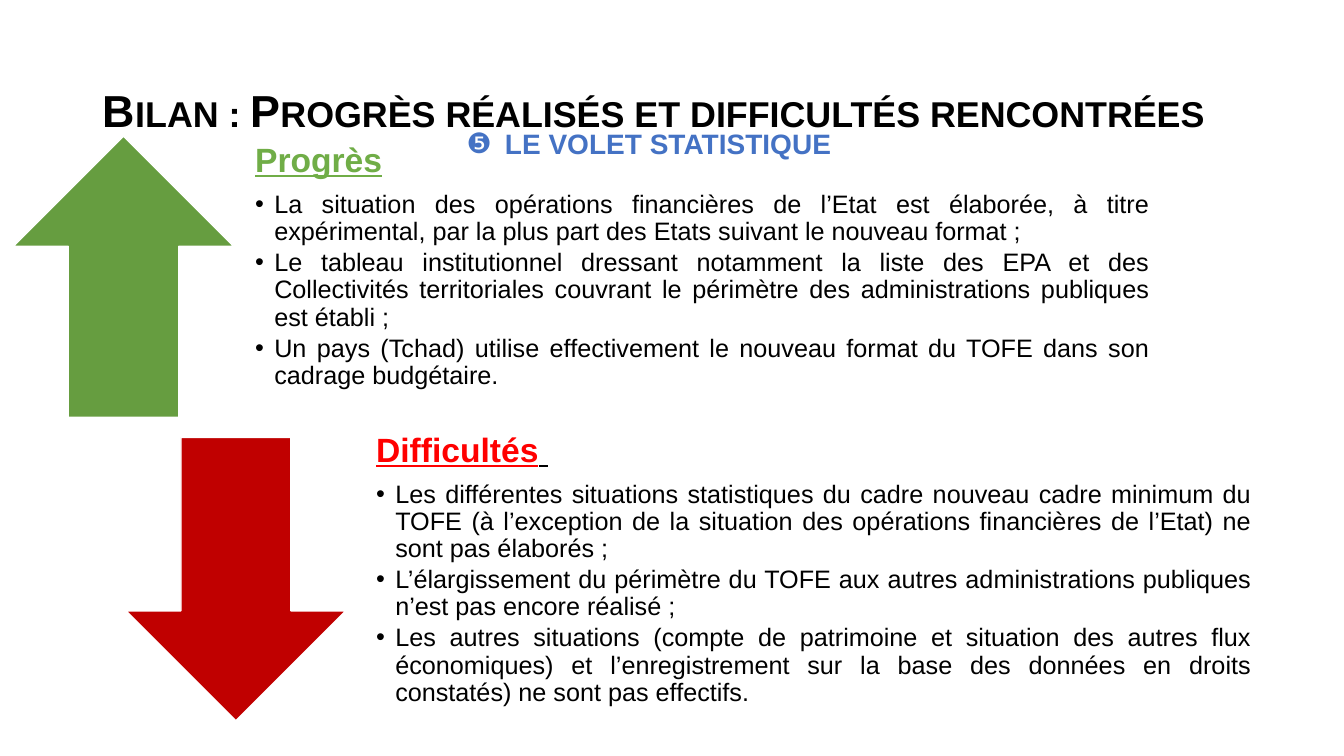
from dataclasses import dataclass

from lxml import etree
from pptx import Presentation
from pptx.dml.color import RGBColor
from pptx.enum.shapes import MSO_SHAPE
from pptx.enum.text import MSO_ANCHOR, MSO_AUTO_SIZE, PP_ALIGN
from pptx.oxml.ns import qn
from pptx.util import Inches, Pt

UP_ARROW = MSO_SHAPE.UP_ARROW
DOWN_ARROW = MSO_SHAPE.DOWN_ARROW
MIDDLE = MSO_ANCHOR.MIDDLE
NO_AUTOFIT = MSO_AUTO_SIZE.NONE
LEFT = PP_ALIGN.LEFT
JUSTIFY = PP_ALIGN.JUSTIFY
TWO_CONTENT_LAYOUT = 3


@dataclass(frozen=True)
class Theme:
    font: str = "Arial"
    title_size: int = 32
    heading_size: int = 24
    subtitle_size: int = 20
    body_size: int = 18
    text: str = "000000"
    white: str = "FFFFFF"
    subtitle: str = "4472C4"
    progress_heading: str = "70AD47"
    progress_arrow: str = "669D40"
    difficulty_heading: str = "FF0000"
    difficulty_arrow: str = "C00000"


THEME = Theme()


@dataclass(frozen=True)
class Box:
    left: float
    top: float
    width: float
    height: float

    def lengths(self):
        return [Inches(side) for side in (self.left, self.top, self.width, self.height)]


@dataclass(frozen=True)
class Section:
    arrow: MSO_SHAPE
    arrow_box: Box
    arrow_color: str
    text_box: Box
    heading: str
    heading_color: str
    points: tuple[str, ...]
    heading_tail: str = ""


SECTIONS = (
    Section(
        UP_ARROW, Box(0.13, 1.35, 2.19, 2.79), THEME.progress_arrow,
        Box(2.34, 1.35, 9.25, 2.78), "Progrès", THEME.progress_heading,
        (
            "La situation des opérations financières de l’Etat est élaborée, à titre "
            "expérimental, par la plus part des Etats suivant le nouveau format ;",
            "Le tableau institutionnel dressant notamment la liste des EPA et des Collectivités "
            "territoriales couvrant le périmètre des administrations publiques est établi ;",
            "Un pays (Tchad) utilise effectivement le nouveau format du TOFE dans son "
            "cadrage budgétaire.",
        ),
    ),
    Section(
        DOWN_ARROW, Box(1.25, 4.34, 2.18, 2.81), THEME.difficulty_arrow,
        Box(3.54, 4.36, 9.06, 2.78), "Difficultés", THEME.difficulty_heading,
        (
            "Les différentes situations statistiques du cadre nouveau cadre minimum du TOFE "
            "(à l’exception de la situation des opérations financières de l’Etat) ne sont "
            "pas élaborés ;",
            "L’élargissement du périmètre du TOFE aux autres administrations publiques "
            "n’est pas encore réalisé ;",
            "Les autres situations (compte de patrimoine et situation des autres flux "
            "économiques) et l’enregistrement sur la base des données en droits constatés) "
            "ne sont pas effectifs.",
        ),
        heading_tail=" ",
    ),
)


def place(shape, box: Box) -> None:
    shape.left, shape.top, shape.width, shape.height = box.lengths()


def format_run(run, size: int, color: str, bold: bool = False, underline: bool = False) -> None:
    font = run.font
    font.name = THEME.font
    font.size = Pt(size)
    font.bold = bold
    font.underline = underline
    font.color.rgb = RGBColor.from_string(color)


def set_spacing(paragraph, after: float = 0) -> None:
    paragraph.line_spacing = 0.9
    paragraph.space_before = Pt(0)
    paragraph.space_after = Pt(after)


def set_bullet(paragraph, character: str = "", indent: float = 0) -> None:
    """Give a hanging bullet, or none when no character is given."""
    properties = paragraph._p.get_or_add_pPr()
    properties.set("marL", str(Inches(indent)))
    properties.set("indent", str(-Inches(indent)))
    if character:
        etree.SubElement(properties, qn("a:buFont")).set("typeface", THEME.font)
        etree.SubElement(properties, qn("a:buChar")).set("char", character)
    else:
        etree.SubElement(properties, qn("a:buNone"))


def add_arrow(slide, section: Section) -> None:
    arrow = slide.shapes.add_shape(section.arrow, *section.arrow_box.lengths())
    arrow.shadow.inherit = False
    arrow.fill.solid()
    arrow.fill.fore_color.rgb = RGBColor.from_string(section.arrow_color)
    arrow.line.color.rgb = RGBColor.from_string(THEME.white)
    arrow.line.width = Pt(1)


def fill_section(placeholder, section: Section) -> None:
    place(placeholder, section.text_box)
    frame = placeholder.text_frame
    frame.auto_size = NO_AUTOFIT
    frame.vertical_anchor = MIDDLE
    frame.margin_left = frame.margin_right = frame.margin_bottom = Inches(0.19)
    frame.margin_top = 0

    frame.text = section.heading
    heading = frame.paragraphs[0]
    set_spacing(heading, after=8.4)
    set_bullet(heading)
    format_run(heading.runs[0], THEME.heading_size, section.heading_color, True, True)
    if section.heading_tail:
        tail = heading.add_run()
        tail.text = section.heading_tail
        format_run(tail, THEME.heading_size, THEME.text, True, True)

    for point in section.points:
        paragraph = frame.add_paragraph()
        paragraph.text = point
        paragraph.level = 1
        paragraph.alignment = JUSTIFY
        set_spacing(paragraph, after=2.7)
        set_bullet(paragraph, "•", 0.19)
        format_run(paragraph.runs[0], THEME.body_size, THEME.text)


def fill_title(title) -> None:
    place(title, Box(0.92, 0.4, 11.5, 1.45))
    frame = title.text_frame
    frame.text = "Bilan : Progrès réalisés et difficultés rencontrées"
    frame.auto_size = NO_AUTOFIT
    frame.vertical_anchor = MIDDLE
    paragraph = frame.paragraphs[0]
    paragraph.alignment = LEFT
    set_spacing(paragraph)
    run = paragraph.runs[0]
    format_run(run, THEME.title_size, THEME.text, bold=True)
    run.font._element.set("cap", "small")


def add_subtitle(slide) -> None:
    subtitle = slide.shapes.add_textbox(*Box(4.53, 1.21, 7.37, 0.44).lengths())
    frame = subtitle.text_frame
    frame.word_wrap = True
    frame.text = "LE VOLET STATISTIQUE"
    paragraph = frame.paragraphs[0]
    set_bullet(paragraph, "❺", 0.38)
    format_run(paragraph.runs[0], THEME.subtitle_size, THEME.subtitle, bold=True)


def main() -> None:
    presentation = Presentation()
    presentation.slide_width = Inches(13.33)
    presentation.slide_height = Inches(7.5)
    slide = presentation.slides.add_slide(presentation.slide_layouts[TWO_CONTENT_LAYOUT])
    fill_title(slide.shapes.title)
    for index, section in enumerate(SECTIONS, start=1):
        add_arrow(slide, section)
        fill_section(slide.placeholders[index], section)
    add_subtitle(slide)
    presentation.save("out.pptx")


if __name__ == "__main__":
    main()
